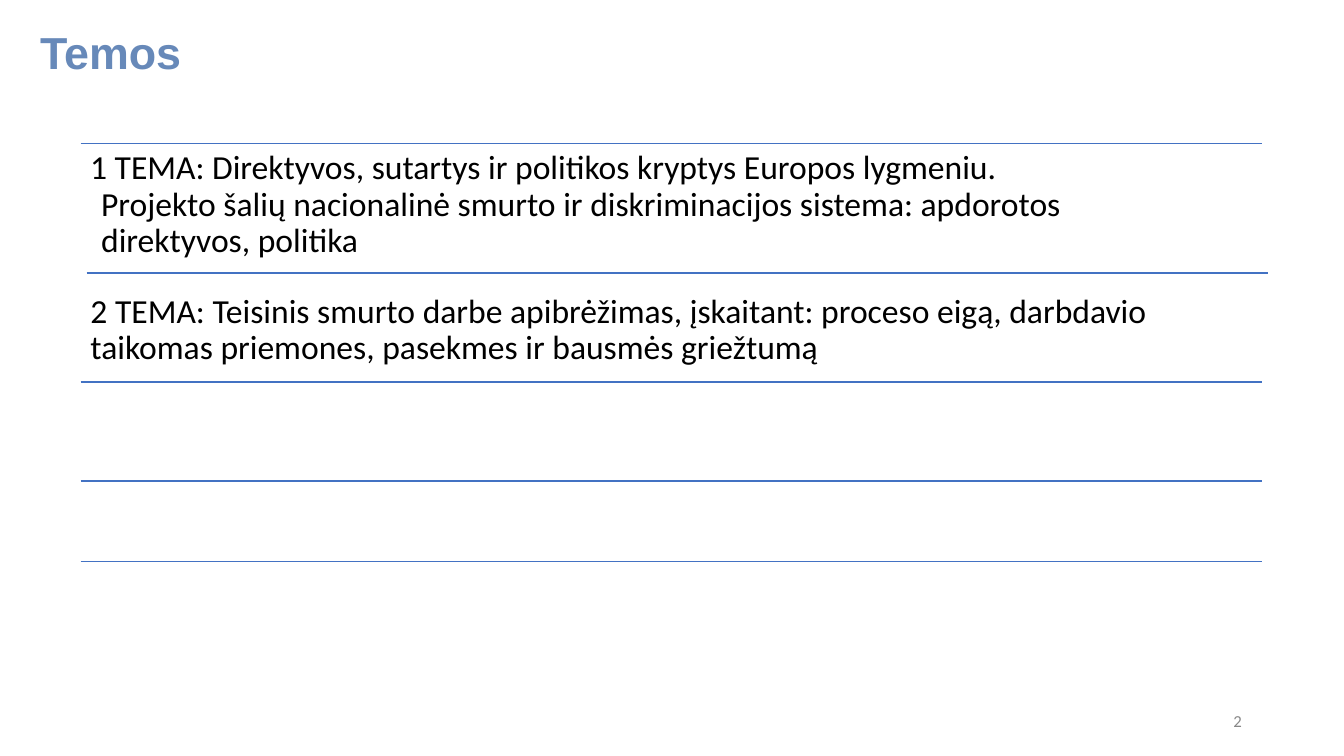
from lxml import etree
from pptx import Presentation
from pptx import util as u
from pptx.dml.color import RGBColor
from pptx.enum import shapes, text
from pptx.oxml.ns import qn

COLORS = {"heading": "6789B9", "rule": "4372C3", "body": "000000", "number": "888888"}
TOP, MIDDLE = text.MSO_ANCHOR.TOP, text.MSO_ANCHOR.MIDDLE
LEFT, RIGHT = text.PP_ALIGN.LEFT, text.PP_ALIGN.RIGHT

# Text styles: font, size, bold, colour, line spacing, alignment
STYLES = {
    "heading": ("Arial", 32, True, "heading", 0.9, LEFT),
    "topic": ("Calibri", 24, False, "body", 0.9, LEFT),
    "number": ("Calibri", 12, False, "number", 1.0, RIGHT),
}

# Content: wording, style, box in cm, side and top insets in cm, anchor
TEXTS = [
    ("Temos", "heading", (0.76, 0.64, 29.21, 3.68), (0.25, 0.13), TOP),
    ("1 TEMA: Direktyvos, sutartys ir politikos kryptys Europos lygmeniu.",
     "topic", (2.06, 3.58, 29.79, 4.17), (0.21, 0.21), TOP),
    ("2 TEMA: Teisinis smurto darbe apibrėžimas, įskaitant: proceso eigą, "
     "darbdavio taikomas priemones, pasekmes ir bausmės griežtumą",
     "topic", (2.03, 7.01, 29.79, 2.64), (0.25, 0.25), MIDDLE),
    ("Projekto šalių nacionalinė smurto ir diskriminacijos sistema: "
     "apdorotos direktyvos, politika",
     "topic", (2.34, 4.52, 27.3, 2.29), (0.21, 0.21), TOP),
    ("2", "number", (23.93, 17.65, 7.62, 1.02), (0.25, 0.13), MIDDLE),
]

# Topic rules: left end and height in cm
RULE_WIDTH = 29.78
RULES = [(2.03, 3.61), (2.18, 6.88), (2.03, 9.63), (2.03, 12.12), (2.03, 14.15)]

deck = Presentation()
deck.slide_width, deck.slide_height = u.Cm(33.87), u.Cm(19.05)
slide = deck.slides.add_slide(deck.slide_layouts[6])

# Rules between topics
for left, y in RULES:
    rule = slide.shapes.add_connector(
        shapes.MSO_CONNECTOR.STRAIGHT,
        u.Cm(left), u.Cm(y), u.Cm(left + RULE_WIDTH), u.Cm(y))
    rule.line.color.rgb = RGBColor.from_string(COLORS["rule"])
    rule.line.width = u.Pt(1)
    etree.SubElement(rule._element.spPr, qn("a:effectLst"))

# Heading, topics and slide number
for wording, style, box, (side, edge), anchor in TEXTS:
    font_name, size, bold, color, spacing, align = STYLES[style]
    frame = slide.shapes.add_textbox(*map(u.Cm, box)).text_frame
    frame.word_wrap = True
    frame.vertical_anchor = anchor
    frame.margin_left = frame.margin_right = u.Cm(side)
    frame.margin_top = frame.margin_bottom = u.Cm(edge)
    frame.text = wording
    paragraph = frame.paragraphs[0]
    paragraph.alignment = align
    paragraph.line_spacing = spacing
    font = paragraph.runs[0].font
    font.name, font.size, font.bold = font_name, u.Pt(size), bold
    font.color.rgb = RGBColor.from_string(COLORS[color])

deck.save("out.pptx")
